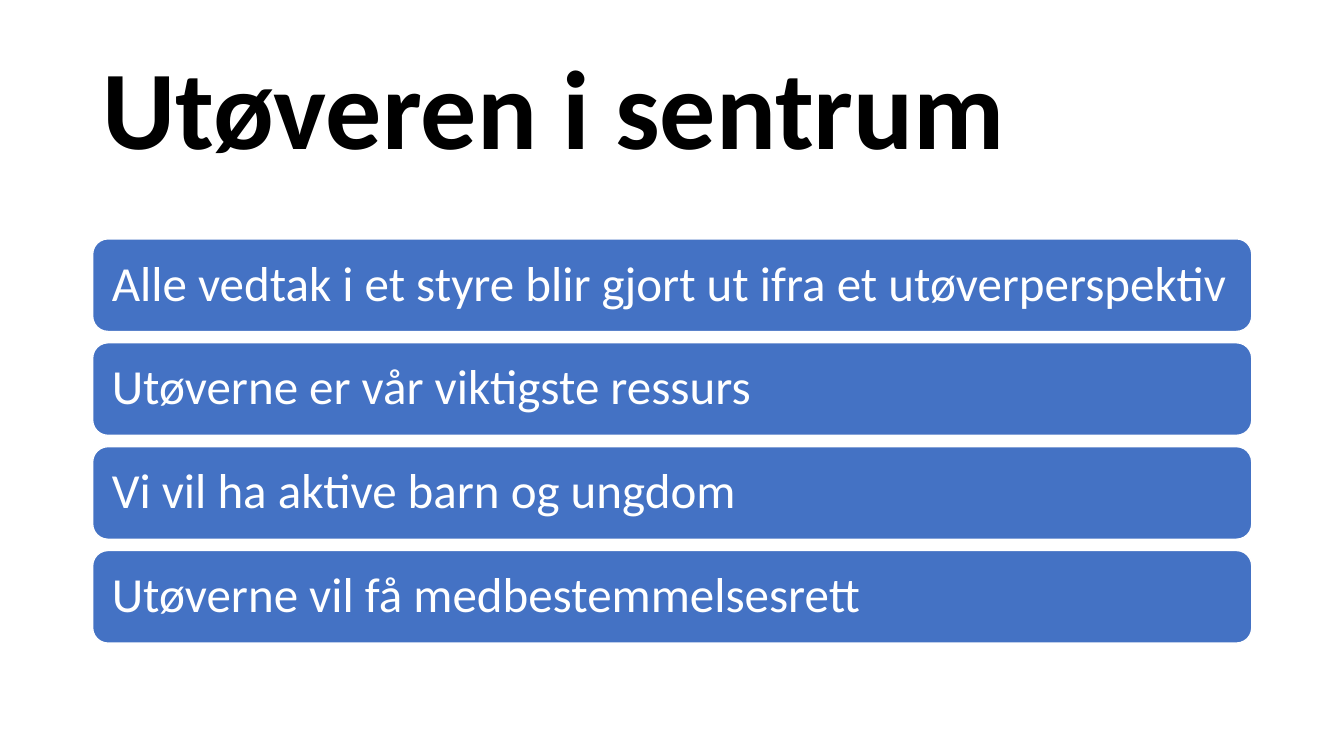
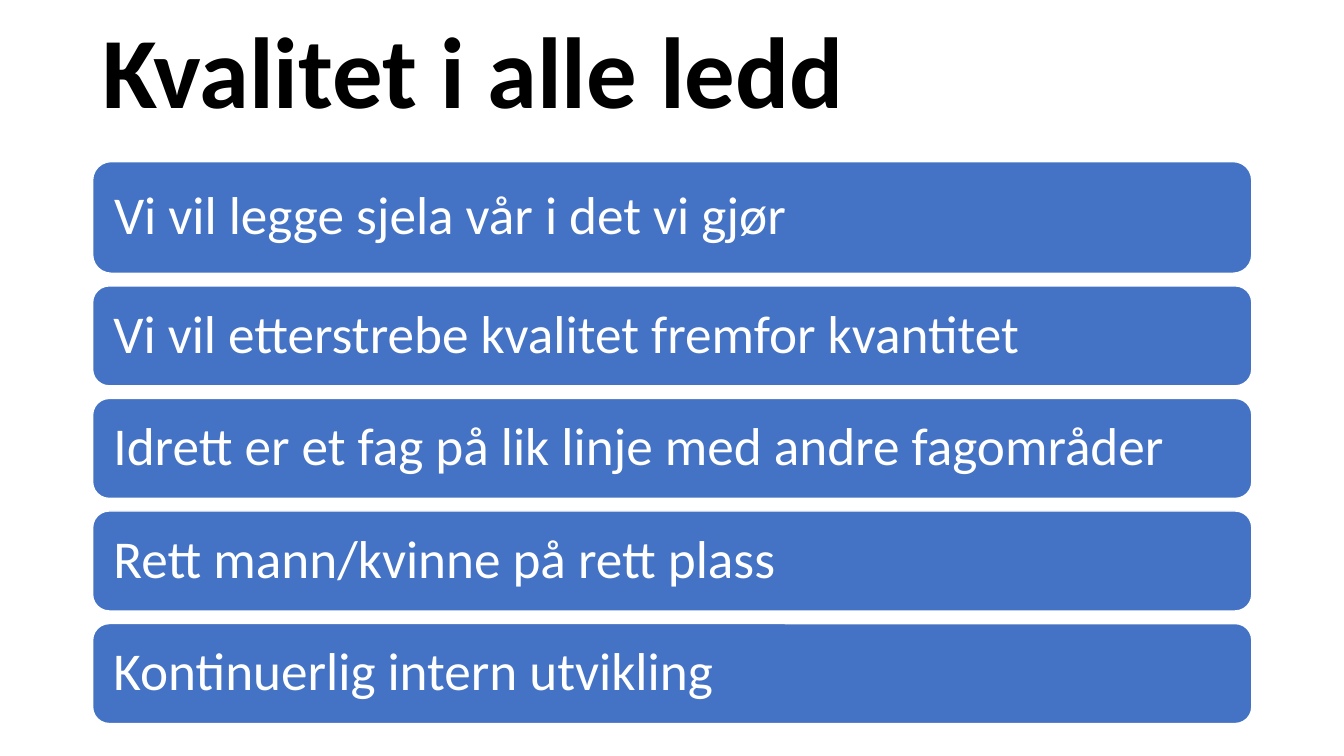
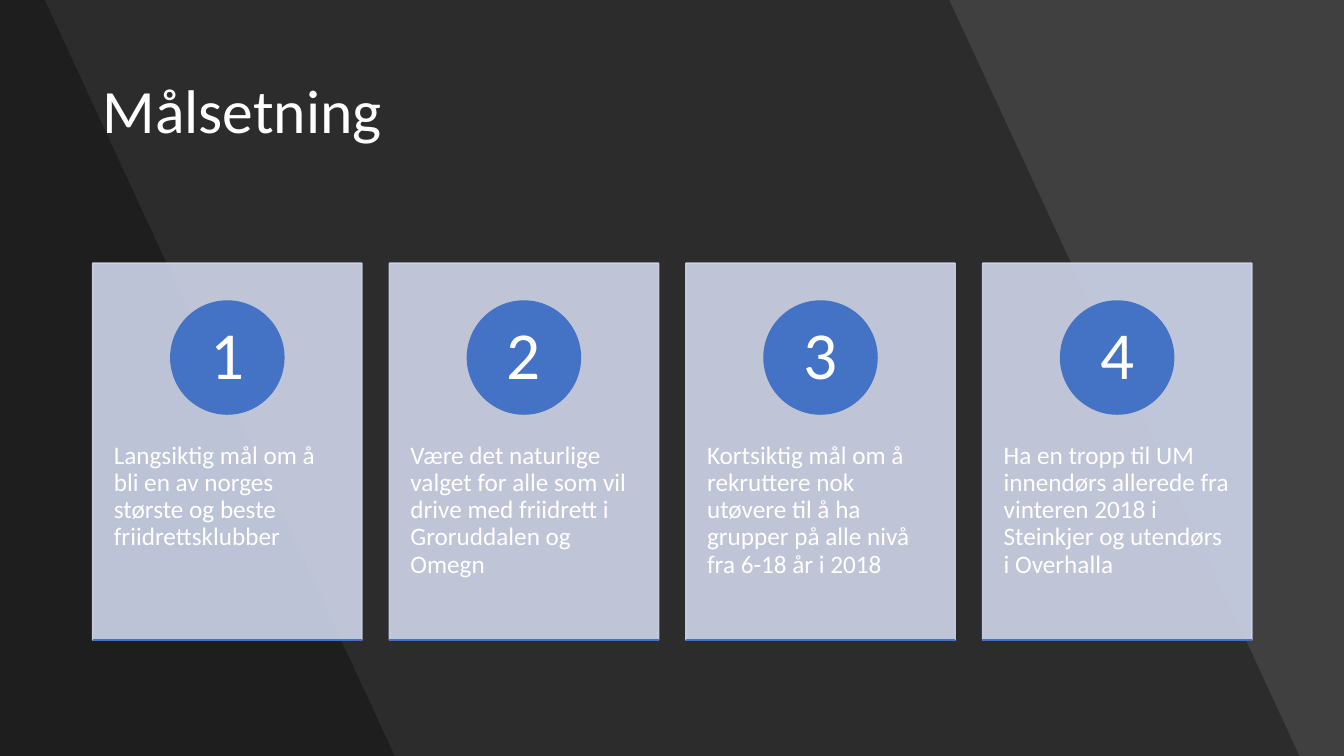
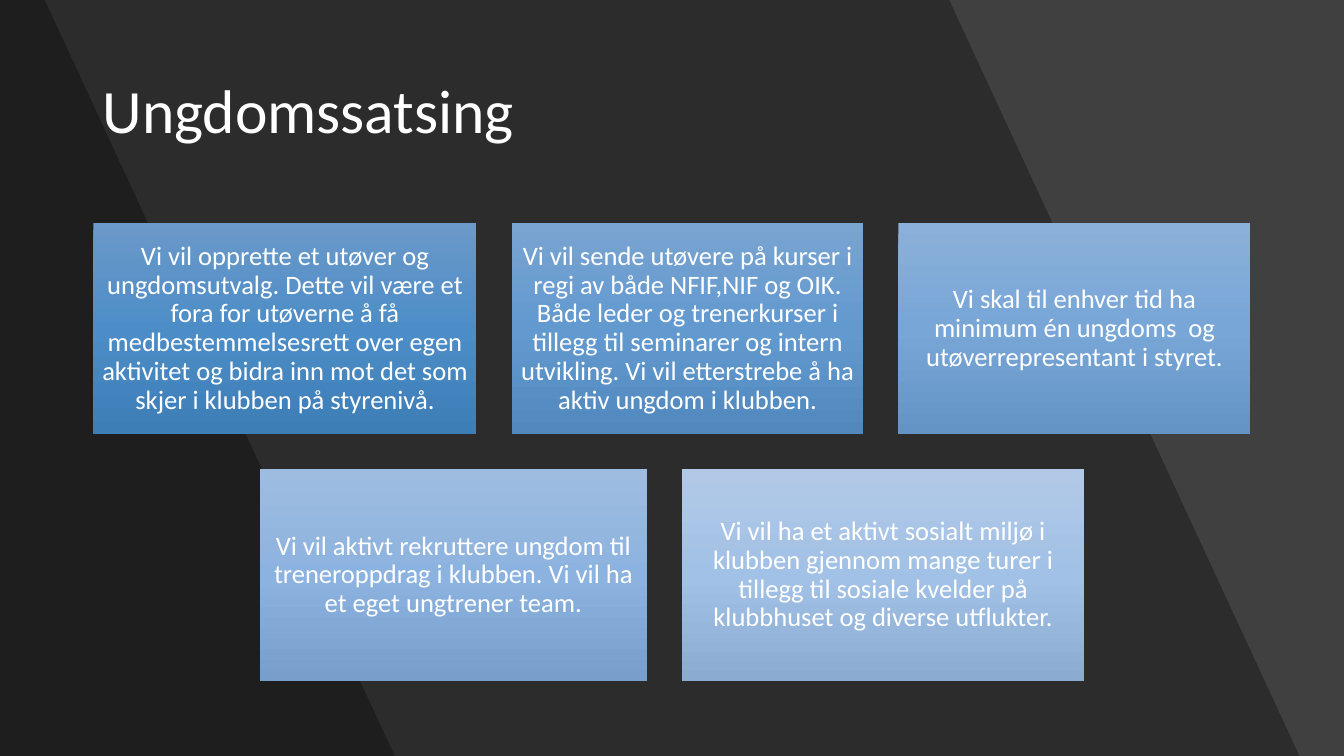
import copy

import pptx
import pptx.util
from pptx.dml.color import RGBColor
from pptx.enum.shapes import MSO_CONNECTOR, MSO_SHAPE
from pptx.enum.text import MSO_ANCHOR, PP_ALIGN
from pptx.oxml.ns import qn
from pptx.oxml.xmlchemy import OxmlElement

Pt = pptx.util.Pt

WHITE = RGBColor(0xFF, 0xFF, 0xFF)
BLACK = RGBColor(0, 0, 0)
BLUE = RGBColor(0x44, 0x72, 0xC4)
PALE = RGBColor(0xCF, 0xD5, 0xEA)
GREY = RGBColor(0x40, 0x40, 0x40)

WIDTH, HEIGHT = 960, 540
LEFT, SPAN = 66.2, 828


def write(shape, text, size, color=WHITE, bold=False, align=PP_ALIGN.LEFT,
          anchor=MSO_ANCHOR.MIDDLE, pad=(7.2, 3.6)):
    """Set one paragraph; pad is the side inset and the top inset."""
    side, top = pad
    frame = shape.text_frame
    form = {"word_wrap": True, "vertical_anchor": anchor,
            "margin_left": Pt(side), "margin_right": Pt(side),
            "margin_top": Pt(top), "margin_bottom": Pt(min(side, top))}
    for name, value in form.items():
        setattr(frame, name, value)
    para = frame.paragraphs[0]
    para.alignment = align
    para.line_spacing = 0.9
    run = para.add_run()
    run.text = text
    run.font.color.rgb = color
    for name, value in {"name": "Calibri", "size": Pt(size), "bold": bold}.items():
        setattr(run.font, name, value)


def paint(shape, color, edge=None, alpha=100):
    """Give a flat fill and a thin edge, both with alpha in percent."""
    shape.shadow.inherit = False
    shape.fill.solid()
    shape.fill.fore_color.rgb = color
    if edge is None:
        shape.line.fill.background()
    else:
        shape.line.color.rgb = edge
        shape.line.width = Pt(1)
    if alpha < 100:
        for tone in shape._element.spPr.iter(qn("a:srgbClr")):
            node = OxmlElement("a:alpha")
            node.set("val", str(alpha * 1000))
            tone.append(node)


deck = pptx.Presentation()
deck.slide_width, deck.slide_height = Pt(WIDTH), Pt(HEIGHT)

# Title, size, top, height, dark
heads = [
    ("Utøveren i sentrum", 80, 28.8, 104.4, False),
    ("Kvalitet i alle ledd", 72, 19.4, 70, False),
    ("Målsetning", 44, 28.8, 104.4, True),
    ("Ungdomssatsing", 44, 28.8, 104.4, True),
]
slides = []
for title, size, top, height, dark in heads:
    slide = deck.slides.add_slide(deck.slide_layouts[6])
    slides.append(slide)
    back = slide.background.fill
    back.solid()
    back.fore_color.rgb = GREY if dark else WHITE
    if dark:
        for high, low in ((678, 928.2), (32, 282)):
            pen = slide.shapes.build_freeform(0, 0, scale=1.0)
            pen.add_line_segments([(Pt(high), 0), (Pt(low), Pt(HEIGHT)), (0, Pt(HEIGHT))])
            paint(pen.convert_to_shape(), BLACK, alpha=30)
    box = slide.shapes.add_textbox(Pt(LEFT), Pt(top), Pt(SPAN), Pt(height))
    write(box, title, size, WHITE if dark else BLACK, not dark)

# Slides 1 and 2: stacked bars (text size, top, first height, height, gap, texts)
stacks = [
    (35, 170.6, 66.2, 66.2, 8, [
        "Alle vedtak i et styre blir gjort ut ifra et utøverperspektiv",
        "Utøverne er vår viktigste ressurs",
        "Vi vil ha aktive barn og ungdom",
        "Utøverne vil få medbestemmelsesrett"]),
    (38, 115.4, 79.8, 71.4, 9, [
        "Vi vil legge sjela vår i det vi gjør",
        "Vi vil etterstrebe kvalitet fremfor kvantitet",
        "Idrett er et fag på lik linje med andre fagområder",
        "Rett mann/kvinne på rett plass",
        "Kontinuerlig intern utvikling"]),
]
for slide, (size, top, height, rest, gap, texts) in zip(slides, stacks):
    for text in texts:
        bar = slide.shapes.add_shape(MSO_SHAPE.ROUNDED_RECTANGLE,
                                     Pt(LEFT), Pt(top), Pt(SPAN), Pt(height))
        paint(bar, BLUE, WHITE)
        write(bar, text, size, pad=(size * 0.3, size * 0.3))
        top += height + gap
        height = rest

# Slide 3: numbered goals
goals = [
    "Langsiktig mål om å bli en av norges største og beste friidrettsklubber",
    "Være det naturlige valget for alle som vil drive med friidrett i Groruddalen og Omegn",
    "Kortsiktig mål om å rekruttere nok utøvere til å ha grupper på alle nivå fra 6-18 år i 2018",
    "Ha en tropp til UM innendørs allerede fra vinteren 2018 i Steinkjer og utendørs i Overhalla",
]
shapes = slides[2].shapes
wide, tall, disc, top = 192.4, 269.2, 80.8, 188
step = (SPAN - wide) / (len(goals) - 1)
for num, goal in enumerate(goals):
    left = LEFT + num * step
    card = shapes.add_shape(MSO_SHAPE.RECTANGLE, Pt(left), Pt(top), Pt(wide), Pt(tall))
    paint(card, PALE, PALE, 90)
    write(card, goal, 18, anchor=MSO_ANCHOR.TOP, pad=(15.1, 128))
    dot = shapes.add_shape(MSO_SHAPE.OVAL, Pt(left + (wide - disc) / 2), Pt(top + 27),
                           Pt(disc), Pt(disc))
    paint(dot, BLUE, BLUE)
    write(dot, str(num + 1), 48, align=PP_ALIGN.CENTER, pad=(6.4, 1))
    base = shapes.add_connector(MSO_CONNECTOR.STRAIGHT, Pt(left), Pt(top + tall),
                                Pt(left + wide), Pt(top + tall))
    base.line.color.rgb = BLUE
    base.line.width = Pt(1)
    base._element.spPr.append(OxmlElement("a:effectLst"))

# Slide 4: centred rows of tiles (width, gradient, text)
rows = [
    [(273.6, ("6B99C9", "4D8DC7", "3E7EB7"),
      "Vi vil opprette et utøver og ungdomsutvalg. Dette vil være et fora for utøverne "
      "å få medbestemmelsesrett over egen aktivitet og bidra inn mot det som skjer i "
      "klubben på styrenivå."),
     (251.4, ("7AA4D1", "6299CF", "5188BE"),
      "Vi vil sende utøvere på kurser i regi av både NFIF,NIF og OIK. Både leder og "
      "trenerkurser i tillegg til seminarer og intern utvikling. Vi vil etterstrebe å "
      "ha aktiv ungdom i klubben."),
     (251.4, ("8BB0D9", "77A6D7", "6493C5"),
      "Vi skal til enhver tid ha minimum én ungdoms  og utøverrepresentant i styret.")],
    [(276.5, ("9EBCE0", "8CB3DF", "789FCB"),
      "Vi vil aktivt rekruttere ungdom til treneroppdrag i klubben. Vi vil ha et eget "
      "ungtrener team."),
     (287.3, ("B1C9E7", "A2C1E6", "8CABD1"),
      "Vi vil ha et aktivt sosialt miljø i klubben gjennom mange turer i tillegg til "
      "sosiale kvelder på klubbhuset og diverse utflukter.")],
]
gap, tall, top = 25, 151, 159.3
for row in rows:
    left = (WIDTH - sum(tile[0] for tile in row) - gap * (len(row) - 1)) / 2
    for wide, tones, text in row:
        tile = slides[3].shapes.add_shape(MSO_SHAPE.RECTANGLE, Pt(left), Pt(top),
                                          Pt(wide), Pt(tall))
        tile.shadow.inherit = False
        tile.line.fill.background()
        tile.fill.gradient()
        tile.fill.gradient_angle = 270
        stops = next(tile._element.spPr.iter(qn("a:gsLst")))
        stops.insert(1, copy.deepcopy(stops[0]))
        for stop, tone, place in zip(tile.fill.gradient_stops, tones, (0, 0.5, 1)):
            stop.color.rgb = RGBColor.from_string(tone)
            stop.position = place
        write(tile, text, 19, align=PP_ALIGN.CENTER, pad=(5.7, 5.7))
        left += wide + gap
    top += tall + gap

deck.save("out.pptx")
